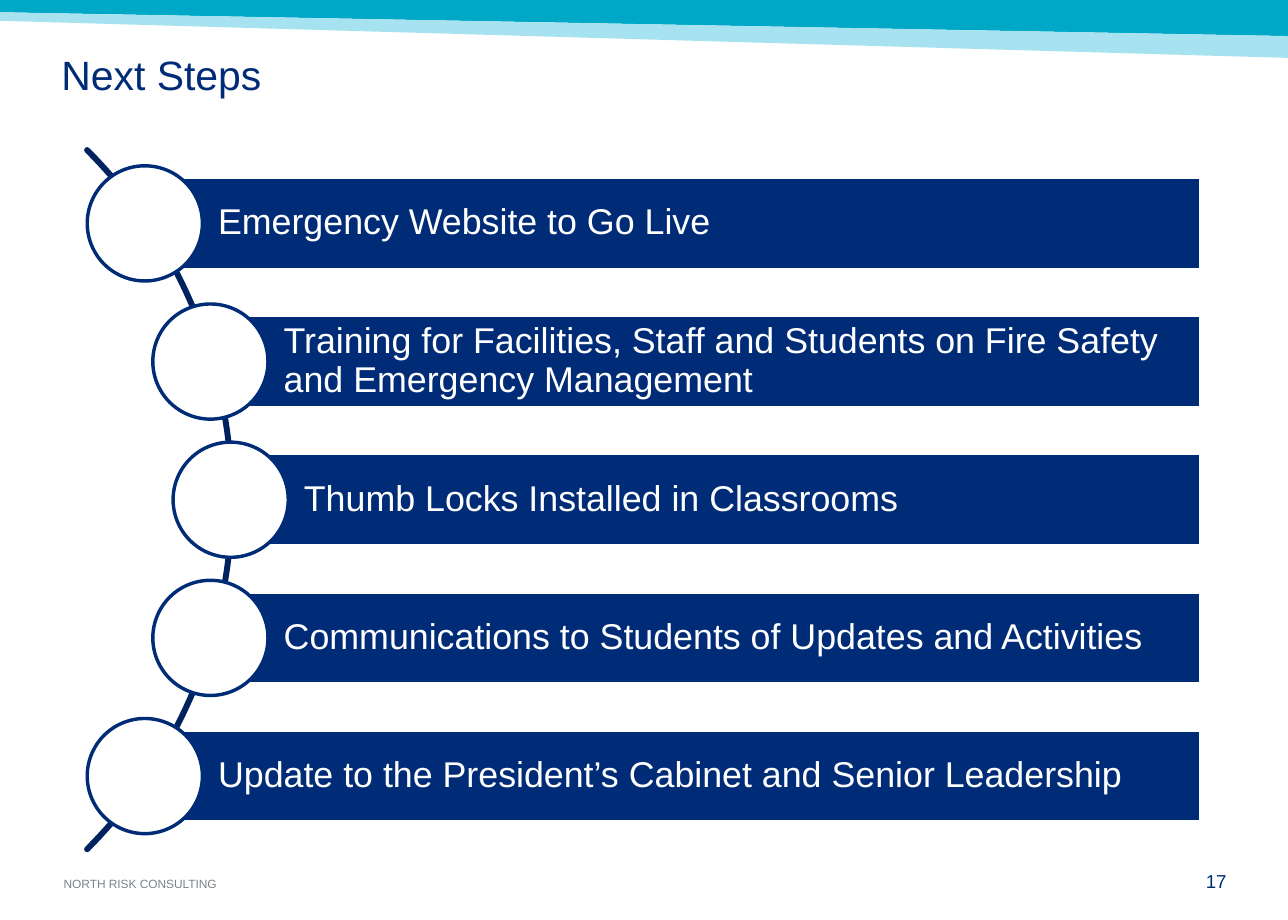
import math
from dataclasses import dataclass

from lxml import etree
from pptx import Presentation
from pptx import util as u
from pptx.dml.color import RGBColor
from pptx.enum import shapes, text

Pt = u.Pt


@dataclass(frozen=True)
class Theme:
    navy: str = "002C77"
    ink: str = "00235F"
    teal: str = "00A8C8"
    pale: str = "A6E2EF"
    grey: str = "7C848A"
    white: str = "FFFFFF"
    font: str = "Arial"
    title: float = 24
    step: float = 21
    page: float = 11
    foot: float = 7


@dataclass(frozen=True)
class Step:
    label: str
    x: float  # centre of the circle, and left edge of the bar


THEME = Theme()
WIDE, HIGH = 756, 540
STEPS = [
    Step("Emergency Website to Go Live", 85),
    Step("Training for Facilities, Staff and Students on Fire Safety "
         "and Emergency Management", 123.5),
    Step("Thumb Locks Installed in Classrooms", 135.4),
    Step("Communications to Students of Updates and Activities", 123.5),
    Step("Update to the President’s Cabinet and Senior Leadership", 85),
]
FIRST, PITCH = 131.1, 81.1  # centre of the first row, row distance
BAR, RIGHT, DISC = 54, 704.7, 67.6


def paint(shape, fill: str | None, line: str | None, width: float = 2) -> None:
    shape.shadow.inherit = False
    if fill:
        shape.fill.solid()
        shape.fill.fore_color.rgb = RGBColor.from_string(fill)
    else:
        shape.fill.background()
    if line:
        shape.line.color.rgb = RGBColor.from_string(line)
        shape.line.width = Pt(width)
    else:
        shape.line.fill.background()


def write(shape, words: str, size: float, color: str, pads=(0, 0, 0, 0),
          anchor=text.MSO_ANCHOR.TOP, align=text.PP_ALIGN.LEFT,
          lead: float = 1.0, wrap: bool = True) -> None:
    frame = shape.text_frame
    frame.text = words
    para = frame.paragraphs[0]
    sides = ("margin_left", "margin_top", "margin_right", "margin_bottom")
    looks = {
        frame: {"word_wrap": wrap, "vertical_anchor": anchor,
                "auto_size": text.MSO_AUTO_SIZE.NONE,
                **{side: Pt(pad) for side, pad in zip(sides, pads)}},
        para: {"alignment": align, "line_spacing": lead},
        para.runs[0].font: {"name": THEME.font, "size": Pt(size)},
    }
    for item, look in looks.items():
        for key, value in look.items():
            setattr(item, key, value)
    para.runs[0].font.color.rgb = RGBColor.from_string(color)


def trace(slide, dots: list[tuple[float, float]], close: bool):
    pts = [(Pt(x), Pt(y)) for x, y in dots]
    pen = slide.shapes.build_freeform(*pts[0])
    pen.add_line_segments(pts[1:], close=close)
    return pen.convert_to_shape()


def draw_bands(slide) -> None:
    bands = [
        (THEME.teal, [(0, 0), (WIDE, 0), (WIDE, 21.2), (0, 7.2)]),
        (THEME.pale, [(0, 7.2), (WIDE, 21.2), (WIDE, 34), (0, 12.2)]),
    ]
    for color, dots in bands:
        paint(trace(slide, dots, True), color, None)


def draw_arc(slide) -> None:
    mid_x, mid_y, radius = -154.1, 293.3, 290.2
    angles = [math.radians(deg) for deg in range(-45, 46)]
    dots = [(mid_x + radius * math.cos(a), mid_y + radius * math.sin(a))
            for a in angles]
    arc = trace(slide, dots, False)
    paint(arc, None, THEME.ink, 3.5)
    arc.line._get_or_add_ln().set("cap", "rnd")


def draw_step(slide, step: Step, mid: float) -> None:
    kinds = shapes.MSO_SHAPE
    bar = slide.shapes.add_shape(
        kinds.RECTANGLE, Pt(step.x), Pt(mid - BAR / 2),
        Pt(RIGHT - step.x), Pt(BAR))
    paint(bar, THEME.navy, THEME.white)
    write(bar, step.label, THEME.step, THEME.white, (43, 4.2, 4.2, 4.2),
          text.MSO_ANCHOR.MIDDLE, lead=0.9)
    disc = slide.shapes.add_shape(
        kinds.OVAL, Pt(step.x - DISC / 2), Pt(mid - DISC / 2),
        Pt(DISC), Pt(DISC))
    paint(disc, THEME.white, THEME.navy)


def main() -> None:
    deck = Presentation()
    deck.slide_width, deck.slide_height = Pt(WIDE), Pt(HIGH)
    slide = deck.slides.add_slide(deck.slide_layouts[5])

    # Header bands and title
    draw_bands(slide)
    title = slide.shapes.title
    place = {"left": 36, "top": 30.2, "width": 684, "height": 54.7}
    for key, value in place.items():
        setattr(title, key, Pt(value))
    write(title, "Next Steps", THEME.title, THEME.navy,
          (0, 3.6, 7.2, 3.6), lead=0.83)

    # Steps along the arc
    draw_arc(slide)
    for row, step in enumerate(STEPS):
        draw_step(slide, step, FIRST + row * PITCH)

    # Footer and page number
    foot = slide.shapes.add_textbox(Pt(37.4), Pt(514.8), Pt(227.5), Pt(7.9))
    write(foot, "NORTH RISK CONSULTING", THEME.foot, THEME.grey,
          anchor=text.MSO_ANCHOR.BOTTOM, wrap=False)
    page = slide.shapes.add_textbox(Pt(684.7), Pt(510.5), Pt(35.3), Pt(13))
    write(page, "17", THEME.page, THEME.navy, align=text.PP_ALIGN.RIGHT)

    deck.save("out.pptx")


if __name__ == "__main__":
    main()
